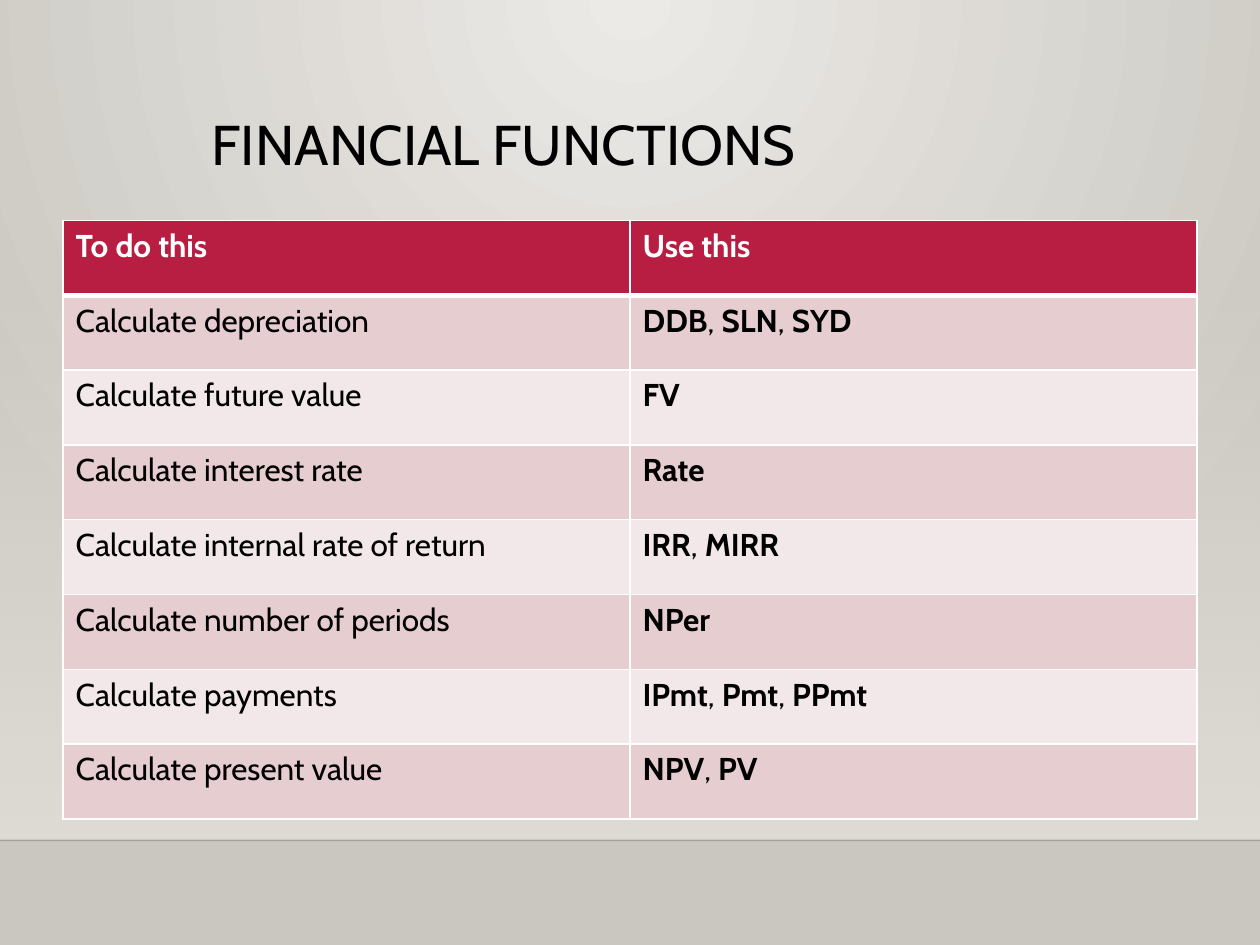
"""Build the Financial Functions slide with its two-column table."""
from lxml.etree import SubElement
from pptx import Presentation
from pptx.dml.color import RGBColor
from pptx.enum.shapes import MSO_CONNECTOR, MSO_SHAPE
from pptx.enum.text import MSO_ANCHOR, MSO_AUTO_SIZE, PP_ALIGN
from pptx.oxml.ns import qn
from pptx.util import Inches, Pt

FONT = "Cabin"
BLACK = RGBColor(0x00, 0x00, 0x00)
WHITE = RGBColor(0xFF, 0xFF, 0xFF)
CRIMSON = RGBColor(0xB7, 0x1E, 0x42)
ROSE = RGBColor(0xE6, 0xCD, 0xCF)
BLUSH = RGBColor(0xF3, 0xE8, 0xE9)
IVORY = RGBColor(0xEC, 0xEA, 0xE7)
STONE = RGBColor(0xCA, 0xC7, 0xC1)
SAND = RGBColor(0xDF, 0xDB, 0xD5)
ROWS = [
    ("To do this", "Use this"),
    ("Calculate depreciation", "DDB, SLN, SYD"),
    ("Calculate future value", "FV"),
    ("Calculate interest rate", "Rate"),
    ("Calculate internal rate of return", "IRR, MIRR"),
    ("Calculate number of periods", "NPer"),
    ("Calculate payments", "IPmt, Pmt, PPmt"),
    ("Calculate present value", "NPV, PV"),
]


def add_run(p, text, size, color, bold=False):
    r = p.add_run()
    r.text = text
    for name, value in {"name": FONT, "size": Pt(size), "bold": bold}.items():
        setattr(r.font, name, value)
    r.font.color.rgb = color


def add_border(cell, side, width):
    ln = SubElement(cell._tc.get_or_add_tcPr(), qn(f"a:ln{side}"), w=str(Pt(width)))
    fill = SubElement(ln, qn("a:solidFill"))
    SubElement(fill, qn("a:srgbClr"), val=str(WHITE))


prs = Presentation()
prs.slide_width, prs.slide_height = Inches(10), Inches(7.5)
s = prs.slides.add_slide(prs.slide_layouts[5])

bg = s.background.fill
bg.gradient()
for stop, color in zip(bg.gradient_stops, (IVORY, STONE)):
    stop.color.rgb = color
grad = s._element.find(".//" + qn("a:gradFill"))
grad.remove(grad.find(qn("a:lin")))
circle = SubElement(grad, qn("a:path"), {"path": "circle"})
SubElement(circle, qn("a:fillToRect"), l="43000", t="0", r="43000", b="100000")

wall = s.shapes.add_shape(MSO_SHAPE.RECTANGLE, 0, Inches(2.2), prs.slide_width, Inches(4.46))
wall.shadow.inherit = False
wall.line.fill.background()
wall.fill.gradient()
wall.fill.gradient_angle = 270
for stop in wall.fill.gradient_stops:
    stop.color.rgb = SAND
SubElement(wall._element.find(".//" + qn("a:srgbClr")), qn("a:alpha"), val="0")

floor = s.shapes.add_connector(
    MSO_CONNECTOR.STRAIGHT, 0, Inches(6.67), prs.slide_width, Inches(6.67))
floor.line.width = Pt(1)
floor.line.color.rgb = BLACK
SubElement(floor._element.find(".//" + qn("a:srgbClr")), qn("a:alpha"), val="20000")
SubElement(floor._element.spPr, qn("a:effectLst"))

title = s.shapes.title
title.left, title.top, title.width, title.height = map(Inches, (1.58, 0.88, 7.19, 1.15))
tf = title.text_frame
for name, value in {"word_wrap": True, "auto_size": MSO_AUTO_SIZE.NONE,
                    "vertical_anchor": MSO_ANCHOR.TOP}.items():
    setattr(tf, name, value)
p = tf.paragraphs[0]
p.alignment = PP_ALIGN.LEFT
p.line_spacing = 0.9
add_run(p, "FINANCIAL FUNCTIONS", 32, BLACK)

table = s.shapes.add_table(
    len(ROWS), 2, Inches(0.5), Inches(1.75), Inches(9), Inches(4.75)).table
for i, row in enumerate(ROWS):
    for j, text in enumerate(row):
        cell = table.cell(i, j)
        for side in "LRTB":
            add_border(cell, side, 3 if (i, side) in ((0, "B"), (1, "T")) else 1)
        cell.fill.solid()
        cell.fill.fore_color.rgb = CRIMSON if i == 0 else ROSE if i % 2 else BLUSH
        p = cell.text_frame.paragraphs[0]
        for k, word in enumerate(text.split(", ")):
            if k:
                add_run(p, ", ", 18, BLACK)
            add_run(p, word, 18, BLACK if i else WHITE, i == 0 or j == 1)

prs.save("out.pptx")
